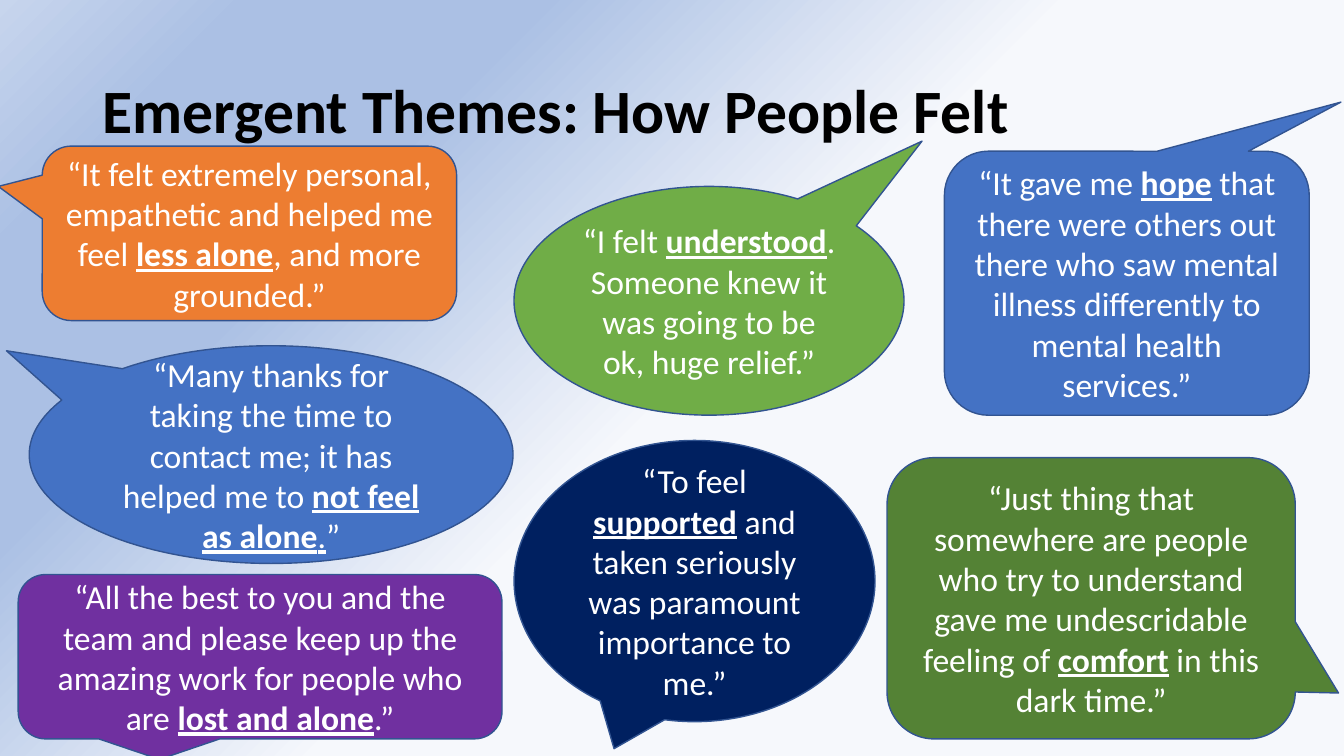
from copy import deepcopy

from pptx import Presentation
from pptx.dml.color import RGBColor
from pptx.enum.shapes import MSO_SHAPE
from pptx.enum.text import MSO_ANCHOR, MSO_AUTO_SIZE, PP_ALIGN
from pptx.util import Pt

TITLE = "Emergent Themes: How People Felt"
FONT = "Calibri"
OUTLINE = "325491"
BACKGROUND = [(0.49, "F6F8FC"), (0.74, "ABC0E4"), (0.88, "ABC0E4"), (1, "C7D5ED")]

ROUNDED = MSO_SHAPE.ROUNDED_RECTANGULAR_CALLOUT
OVAL = MSO_SHAPE.OVAL_CALLOUT

# shape, (left, top, width, height), tail tip relative to the centre, fill,
# runs as (text, style) where style holds "b" for bold and "u" for underline
QUOTES = [
    (ROUNDED, (30.2, 104.4, 296, 124.6), (-0.606, -0.269), "ED7D31",
     [("“It felt extremely personal, empathetic and helped me feel ", ""),
      ("less alone", "bu"), (", and more grounded.”", "")]),
    (OVAL, (20.9, 247, 345.6, 155.5), (-0.547, -0.477), "4472C4",
     [("“Many thanks for taking the time to contact me; it has helped me to ", ""),
      ("not feel as alone", "bu"), (".", "u"), ("”", "")]),
    (ROUNDED, (13, 410.4, 345.6, 117.4), (-0.208, 0.625), "7030A0",
     [("“All the best to you and the team and please keep up the amazing work "
       "for people who are ", ""),
      ("lost and alone", "bu"), (".”", "")]),
    (OVAL, (367.2, 133.2, 278.6, 163.4), (0.546, -0.698), "70AD47",
     [("“I felt ", ""), ("understood", "bu"),
      (". Someone knew it was going to be ok, huge relief.”", "")]),
    (ROUNDED, (674.6, 108, 260.6, 188.6), (0.587, -0.686), "4472C4",
     [("“It gave me ", ""), ("hope", "bu"),
      (" that there were others out there who saw mental illness differently "
       "to mental health services.”", "")]),
    (OVAL, (367.2, 314.6, 257.8, 200.9), (-0.223, 0.596), "002060",
     [("“To feel ", ""), ("supported", "bu"),
      (" and taken seriously was paramount importance to me.”", "")]),
    (ROUNDED, (633.6, 326.9, 291.6, 200.9), (0.606, 0.337), "548235",
     [("“Just thing that somewhere are people who try to understand gave me "
       "undescridable feeling of ", ""),
      ("comfort", "bu"), (" in this dark time.”", "")]),
]


def rgb(hex_color):
    return RGBColor.from_string(hex_color)


def style_run(r, size, color, bold=False, underline=False):
    r.font.name = FONT
    r.font.size = Pt(size)
    r.font.color.rgb = rgb(color)
    r.font.bold = bold
    r.font.underline = underline


def paint_background(s):
    fill = s.background.fill
    fill.gradient()
    fill.gradient_angle = 135
    stop_list = s.element.xpath(".//p:bg//a:gsLst")[0]
    while len(stop_list) < len(BACKGROUND):
        stop_list.append(deepcopy(stop_list[0]))
    for stop, (position, color) in zip(fill.gradient_stops, BACKGROUND):
        stop.position = position
        stop.color.rgb = rgb(color)


def add_title(s):
    sp = s.shapes.title
    sp.left, sp.top, sp.width, sp.height = Pt(66), Pt(28.8), Pt(828), Pt(104.4)
    tf = sp.text_frame
    tf.text = TITLE
    tf.auto_size = MSO_AUTO_SIZE.NONE
    tf.vertical_anchor = MSO_ANCHOR.MIDDLE
    p = tf.paragraphs[0]
    p.alignment = PP_ALIGN.LEFT
    p.line_spacing = 0.9
    style_run(p.runs[0], 44, "000000", bold=True)


def add_quote(s, kind, box, tail, color, runs):
    sp = s.shapes.add_shape(kind, *[Pt(v) for v in box])
    sp.adjustments[0], sp.adjustments[1] = tail
    sp.shadow.inherit = False
    sp.fill.solid()
    sp.fill.fore_color.rgb = rgb(color)
    sp.line.color.rgb = rgb(OUTLINE)
    sp.line.width = Pt(1)
    tf = sp.text_frame
    tf.word_wrap = True
    tf.vertical_anchor = MSO_ANCHOR.MIDDLE
    p = tf.paragraphs[0]
    p.alignment = PP_ALIGN.CENTER
    for text, style in runs:
        r = p.add_run()
        r.text = text
        style_run(r, 24, "FFFFFF", "b" in style, "u" in style)


def main():
    prs = Presentation()
    prs.slide_width, prs.slide_height = Pt(960), Pt(540)
    s = prs.slides.add_slide(prs.slide_layouts[5])
    paint_background(s)
    add_title(s)
    for quote in QUOTES:
        add_quote(s, *quote)
    prs.save("out.pptx")


if __name__ == "__main__":
    main()
